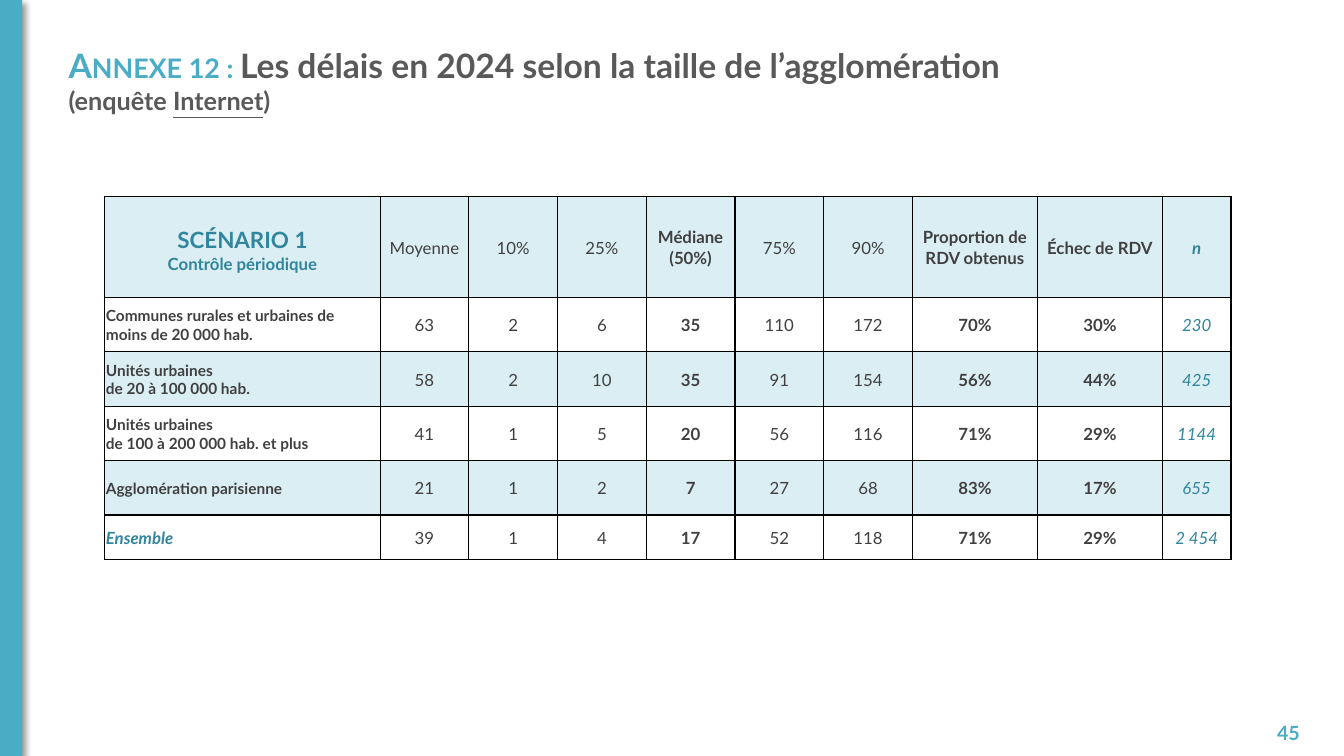
from lxml.etree import SubElement
from pptx import Presentation
from pptx.dml.color import RGBColor
from pptx.enum.shapes import MSO_SHAPE
from pptx.enum.text import MSO_ANCHOR, MSO_AUTO_SIZE, PP_ALIGN
from pptx.oxml.ns import qn
from pptx.util import Inches, Pt

COLORS = {"accent": "4BACC6", "teal": "31859C", "title": "595959",
          "text": "404040", "black": "000000"}
COLUMN_WIDTHS = [2.73] + [0.88] * 6 + [1.24] * 2 + [0.68]
ROW_HEIGHTS = [1] + [0.54] * 4 + [0.44]
MEDIAN, OBTAINED, FAILED, COUNT = 4, 7, 8, 9
BOLD_COLUMNS = {0, MEDIAN, OBTAINED, FAILED}
DELAYS = [
    ["scénario 1\nContrôle périodique", "Moyenne", "10%", "25%", "Médiane\n(50%)",
     "75%", "90%", "Proportion de RDV obtenus", "Échec de RDV", "n"],
    ["Communes rurales et urbaines de moins de 20 000 hab.",
     "63", "2", "6", "35", "110", "172", "70%", "30%", "230"],
    ["Unités urbaines\nde 20 à 100 000 hab.",
     "58", "2", "10", "35", "91", "154", "56%", "44%", "425"],
    ["Unités urbaines\nde 100 à 200 000 hab. et plus",
     "41", "1", "5", "20", "56", "116", "71%", "29%", "1144"],
    ["Agglomération parisienne",
     "21", "1", "2", "7", "27", "68", "83%", "17%", "655"],
    ["Ensemble", "39", "1", "4", "17", "52", "118", "71%", "29%", "2 454"],
]


def rgb(name):
    return RGBColor.from_string(COLORS[name])


def style(run, size, color, bold=False, italic=False, small_caps=False):
    font = run.font
    font.name, font.size, font.bold, font.italic = "Lato", Pt(size), bold, italic
    font.color.rgb = rgb(color)
    if small_caps:
        font._element.set("cap", "small")


def add_side_bar(slide, left, top, width, height):
    bar = slide.shapes.add_shape(MSO_SHAPE.RECTANGLE, Inches(left), Inches(top),
                                 Inches(width), Inches(height))
    bar.fill.solid()
    bar.fill.fore_color.rgb = rgb("accent")
    bar.line.fill.background()
    bar.shadow.inherit = False
    effects = bar._element.spPr.find(qn("a:effectLst"))
    shadow = SubElement(effects, qn("a:outerShdw"), blurRad=str(Pt(4)),
                        dist=str(Pt(3)), dir=str(45 * 60000), rotWithShape="0")
    shade = SubElement(shadow, qn("a:srgbClr"), val=COLORS["black"])
    SubElement(shade, qn("a:alpha"), val="40000")


def add_title(slide, left, top, width, height):
    title = slide.shapes.title
    title.left, title.top = Inches(left), Inches(top)
    title.width, title.height = Inches(width), Inches(height)
    frame = title.text_frame
    frame.word_wrap = True
    frame.auto_size = MSO_AUTO_SIZE.NONE
    frame.vertical_anchor = MSO_ANCHOR.TOP
    paragraph = frame.paragraphs[0]
    paragraph.alignment = PP_ALIGN.LEFT

    def add_part(text, size, color="title", **options):
        run = paragraph.add_run()
        run.text = text
        style(run, size, color, bold=True, **options)
        return run

    add_part("Annexe 12 : ", 24, "accent", small_caps=True)
    add_part("Les délais en 2024 selon la taille de l’agglomération", 24)
    paragraph.add_line_break()
    line_break = paragraph._p.find(qn("a:br"))
    SubElement(line_break, qn("a:rPr"), sz="2400")
    add_part("(enquête ", 18)
    add_part("Internet", 18).font.underline = True
    add_part(")", 18)


def add_page_number(slide, number, left, top, width, height):
    box = slide.shapes.add_textbox(Inches(left), Inches(top), Inches(width), Inches(height))
    frame = box.text_frame
    frame.word_wrap = True
    frame.vertical_anchor = MSO_ANCHOR.MIDDLE
    frame.text = number
    frame.paragraphs[0].alignment = PP_ALIGN.RIGHT
    style(frame.paragraphs[0].runs[0], 14, "accent", bold=True)


def cell_style(row, column, line):
    """Return the run formatting for one line of a table cell."""
    if row == 0 and column == 0:
        return dict(size=12 if line else 20, color="teal", bold=True, small_caps=line == 0)
    if column == COUNT:
        return dict(size=12, color="teal", bold=row == 0, italic=True)
    if column == 0:
        if row == len(DELAYS) - 1:
            return dict(size=12, color="teal", bold=True, italic=True)
        return dict(size=11, color="text", bold=True)
    return dict(size=12, color="text", bold=column in BOLD_COLUMNS)


def set_borders(cell):
    properties = cell._tc.get_or_add_tcPr()
    for position, side in enumerate(("lnL", "lnR", "lnT", "lnB")):
        border = SubElement(properties, qn("a:" + side), w=str(Pt(1)))
        fill = SubElement(border, qn("a:solidFill"))
        SubElement(fill, qn("a:srgbClr"), val=COLORS["black"])
        properties.insert(position, border)


def fill_cell(cell, tinted):
    if not tinted:
        cell.fill.background()
        return
    cell.fill.solid()
    cell.fill.fore_color.rgb = rgb("accent")
    tint = cell._tc.tcPr.find(qn("a:solidFill")).find(qn("a:srgbClr"))
    SubElement(tint, qn("a:alpha"), val="20000")


def add_delay_table(slide, left, top, width, height):
    table = slide.shapes.add_table(len(DELAYS), len(COLUMN_WIDTHS), Inches(left),
                                   Inches(top), Inches(width), Inches(height)).table
    table.first_row = table.horz_banding = False
    for column, size in zip(table.columns, COLUMN_WIDTHS):
        column.width = Inches(size)
    for row, size in zip(table.rows, ROW_HEIGHTS):
        row.height = Inches(size)
    for r, values in enumerate(DELAYS):
        for c, value in enumerate(values):
            cell = table.cell(r, c)
            cell.text_frame.text = value
            cell.vertical_anchor = MSO_ANCHOR.MIDDLE
            cell.margin_left = cell.margin_top = cell.margin_right = Inches(0.01)
            cell.margin_bottom = 0
            for line, paragraph in enumerate(cell.text_frame.paragraphs):
                is_label = r > 0 and c == 0
                paragraph.alignment = PP_ALIGN.LEFT if is_label else PP_ALIGN.CENTER
                style(paragraph.runs[0], **cell_style(r, c, line))
            fill_cell(cell, tinted=r % 2 == 0)
            set_borders(cell)


def main():
    deck = Presentation()
    deck.slide_width, deck.slide_height = Inches(13.33), Inches(7.5)
    slide = deck.slides.add_slide(deck.slide_layouts[5])
    add_side_bar(slide, 0, 0, 0.22, 7.5)
    add_title(slide, 0.58, 0.4, 10.45, 0.96)
    add_page_number(slide, "45", 12.24, 7.07, 0.75, 0.4)
    add_delay_table(slide, 1.04, 1.95, sum(COLUMN_WIDTHS), sum(ROW_HEIGHTS))
    deck.save("out.pptx")


if __name__ == "__main__":
    main()
